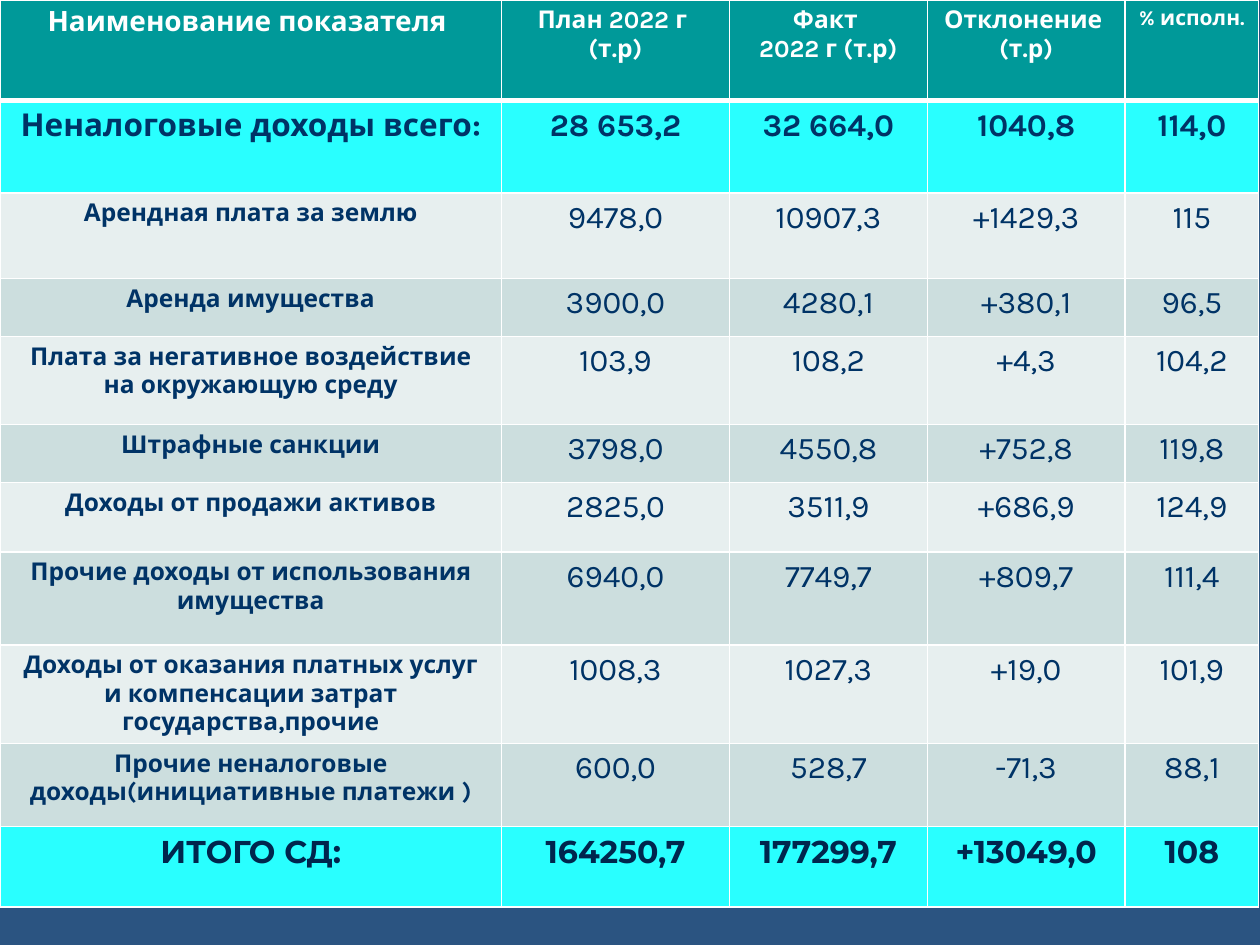
import lxml.etree
import pptx
import pptx.dml.color
import pptx.enum.text
import pptx.oxml.ns
import pptx.util

Inches = pptx.util.Inches
RGBColor = pptx.dml.color.RGBColor

BACKGROUND = RGBColor(0x2B, 0x54, 0x81)
WHITE = RGBColor(0xFF, 0xFF, 0xFF)
TEAL = RGBColor(0x00, 0x99, 0x99)
CYAN = RGBColor(0x29, 0xFF, 0xFF)
LIGHT = RGBColor(0xE7, 0xEF, 0xEF)
DARK = RGBColor(0xCC, 0xDE, 0xDE)
NAVY = RGBColor(0x00, 0x33, 0x66)
DEEP_NAVY = RGBColor(0x00, 0x26, 0x4D)

COLUMN_WIDTHS = [3.98, 1.81, 1.57, 1.57, 1.06]
ROW_HEIGHTS = [0.8, 0.73, 0.68, 0.46, 0.7, 0.46, 0.55, 0.74, 0.66, 0.66, 0.64]
HEADER_SIZES = [16, 14, 14, 14, 12]

ROWS = [
    ["Наименование показателя ", "План 2022 г \n(т.р)", "Факт \n2022 г (т.р)",
     "Отклонение \n(т.р)", "% исполн."],
    ["Неналоговые доходы всего:", "28 653,2", "32 664,0", "1040,8", "114,0"],
    ["Арендная плата за землю", "9478,0", "10907,3", "+1429,3", "115"],
    ["Аренда имущества", "3900,0", "4280,1", "+380,1", "96,5"],
    ["Плата за негативное воздействие на окружающую среду",
     "103,9", "108,2", "+4,3", "104,2"],
    ["Штрафные санкции", "3798,0", "4550,8", "+752,8", "119,8"],
    ["Доходы от продажи активов", "2825,0", "3511,9", "+686,9", "124,9"],
    ["Прочие доходы от использования имущества",
     "6940,0", "7749,7", "+809,7", "111,4"],
    ["Доходы от оказания платных услуг и компенсации затрат государства,прочие",
     "1008,3", "1027,3", "+19,0", "101,9"],
    ["Прочие неналоговые доходы(инициативные платежи )",
     "600,0", "528,7", "-71,3", "88,1"],
    ["ИТОГО СД:", "164250,7", "177299,7", "+13049,0", "108"],
]
LAST_ROW = len(ROWS) - 1


def write_text(cell, text, *, size=18, bold=True, color=NAVY, font="Karla"):
    cell.text_frame.text = text
    for paragraph in cell.text_frame.paragraphs:
        paragraph.alignment = pptx.enum.text.PP_ALIGN.CENTER
        for run in paragraph.runs:
            run.font.name = font
            run.font.size = pptx.util.Pt(size)
            run.font.bold = bold
            run.font.color.rgb = color


def add_borders(cell, top, bottom):
    qn = pptx.oxml.ns.qn
    properties = cell._tc.get_or_add_tcPr()
    widths = {"a:lnL": 1, "a:lnR": 1, "a:lnT": top, "a:lnB": bottom}
    for position, (tag, width) in enumerate(widths.items()):
        line = properties.makeelement(qn(tag), {"w": str(pptx.util.Pt(width))})
        fill = lxml.etree.SubElement(line, qn("a:solidFill"))
        lxml.etree.SubElement(fill, qn("a:srgbClr"), val=str(WHITE))
        properties.insert(position, line)


presentation = pptx.Presentation()
presentation.slide_width = Inches(10)
presentation.slide_height = Inches(7.5)
slide = presentation.slides.add_slide(presentation.slide_layouts[6])
slide.background.fill.solid()
slide.background.fill.fore_color.rgb = BACKGROUND

table = slide.shapes.add_table(
    len(ROWS), len(COLUMN_WIDTHS), Inches(0), Inches(0),
    Inches(sum(COLUMN_WIDTHS)), Inches(sum(ROW_HEIGHTS))).table
for column, width in zip(table.columns, COLUMN_WIDTHS):
    column.width = Inches(width)
for row, height in zip(table.rows, ROW_HEIGHTS):
    row.height = Inches(height)

for row_index, values in enumerate(ROWS):
    for column_index, text in enumerate(values):
        cell = table.cell(row_index, column_index)
        if row_index == 0:
            background = TEAL
            text_format = {"size": HEADER_SIZES[column_index], "color": WHITE}
        elif row_index == 1:
            background = CYAN
            text_format = {}
        elif row_index == LAST_ROW:
            background = CYAN
            text_format = {"color": DEEP_NAVY, "font": "Montserrat"}
        else:
            background = DARK if row_index % 2 else LIGHT
            text_format = {"size": 14} if column_index == 0 else {"bold": False}
        write_text(cell, text, **text_format)
        cell.fill.solid()
        cell.fill.fore_color.rgb = background
        add_borders(cell, top=3 if row_index == 1 else 1,
                    bottom=3 if row_index == 0 else 1)

presentation.save("out.pptx")
